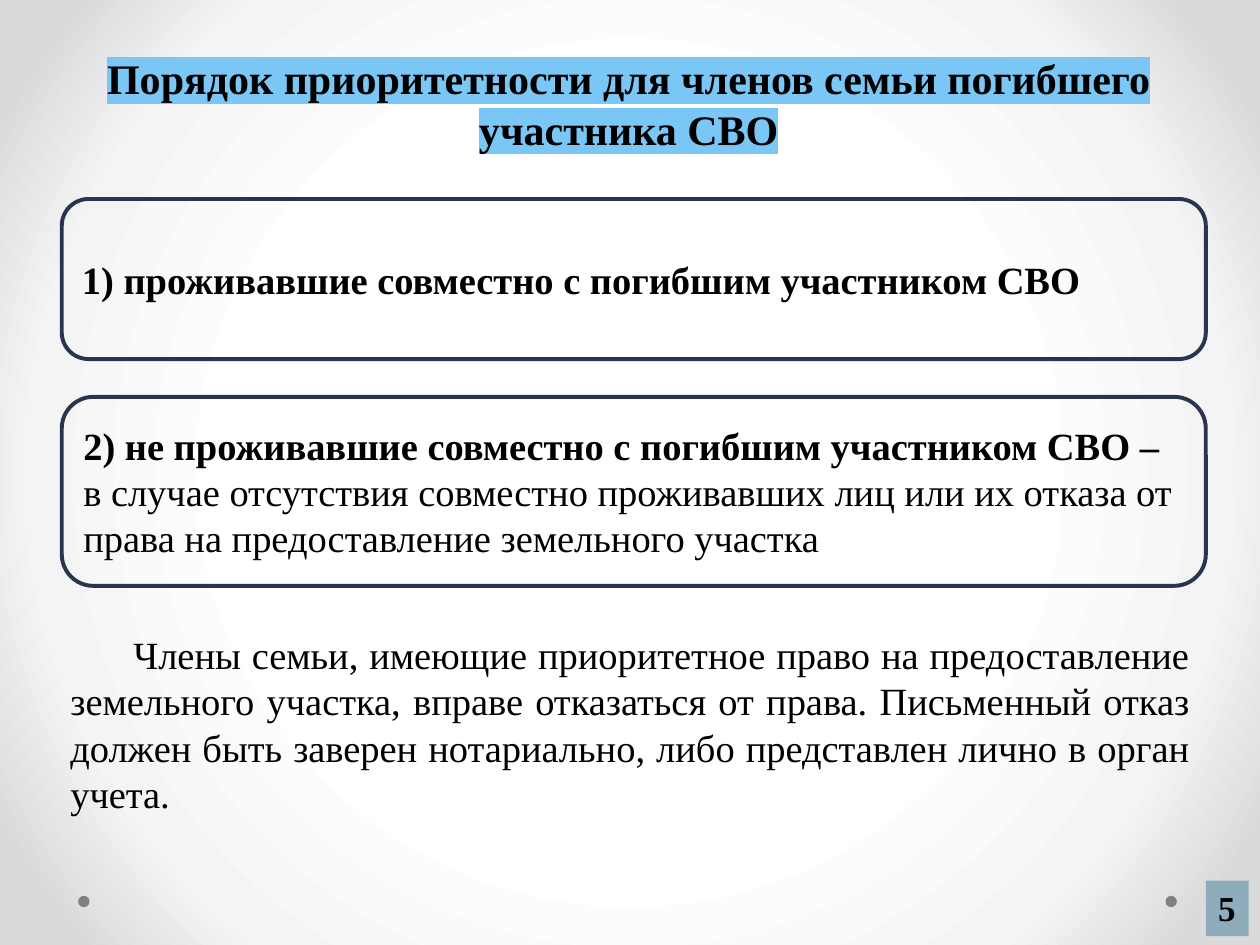
from lxml import etree
from pptx import Presentation
from pptx.dml.color import RGBColor
from pptx.enum import shapes, text
from pptx.oxml.ns import qn
from pptx.util import Inches, Pt

COLORS = {"ink": "000000", "outline": "2A344F", "dot": "808080",
          "number": "8FACBC", "highlight": "7AC7F6"}
GRADIENT = [(50, "FFFFFF"), (76, "F4F4F4"), (92, "DADADA")]
FONT = "Times New Roman"
TITLE = "Порядок приоритетности для членов семьи погибшего участника СВО"
PRIORITIES = [
    (1.58, 1.27, [("1) проживавшие совместно с погибшим участником СВО", True)]),
    (3.15, 1.5, [("2) не проживавшие совместно с погибшим участником СВО – ", True),
                 ("в случае отсутствия совместно проживавших лиц или их отказа "
                  "от права на предоставление земельного участка", False)]),
]
NOTE = ("Члены семьи, имеющие приоритетное право на предоставление земельного "
        "участка, вправе отказаться от права. Письменный отказ должен быть заверен "
        "нотариально, либо представлен лично в орган учета.")
NUMBER = "5"
DOTS = [0.62, 9.25]


def rgb(name):
    return RGBColor.from_string(COLORS[name])


def paint_background(s):
    s.background.fill.gradient()
    grad = next(s._element.iter(qn("a:gradFill")))
    for child in list(grad):
        grad.remove(child)
    stops = etree.SubElement(grad, qn("a:gsLst"))
    for pos, color in GRADIENT:
        gs = etree.SubElement(stops, qn("a:gs"), pos=str(pos * 1000))
        etree.SubElement(gs, qn("a:srgbClr"), val=color)
    circle = etree.SubElement(grad, qn("a:path"), path="circle")
    etree.SubElement(circle, qn("a:fillToRect"), dict.fromkeys("ltrb", "50000"))


def add_shape(s, kind, box, fill=None, line=None):
    sp = s.shapes.add_shape(kind, *map(Inches, box))
    sp.shadow.inherit = False
    if fill:
        sp.fill.solid()
        sp.fill.fore_color.rgb = rgb(fill)
    else:
        sp.fill.background()
    if line:
        sp.line.color.rgb = rgb(line)
        sp.line.width = Pt(2.25)
    else:
        sp.line.fill.background()
    return sp


def write(sp, runs, size, align=text.PP_ALIGN.LEFT,
          anchor=text.MSO_ANCHOR.TOP, wrap=True, highlight=None):
    tf = sp.text_frame
    tf.word_wrap = wrap
    tf.vertical_anchor = anchor
    p = tf.paragraphs[0]
    p.alignment = align
    for words, bold in runs:
        r = p.add_run()
        r.text = words
        r.font.size, r.font.bold, r.font.name = Pt(size), bold, FONT
        r.font.color.rgb = rgb("ink")
        if highlight:
            mark = etree.Element(qn("a:highlight"))
            etree.SubElement(mark, qn("a:srgbClr"), val=COLORS[highlight])
            r.font._element.find(qn("a:solidFill")).addnext(mark)
    return p


def main():
    prs = Presentation()
    prs.slide_width, prs.slide_height = Inches(10), Inches(7.5)
    s = prs.slides.add_slide(prs.slide_layouts[6])
    paint_background(s)
    kinds = shapes.MSO_SHAPE

    for left in DOTS:
        add_shape(s, kinds.OVAL, (left, 7.11, 0.09, 0.09), fill="dot")

    for top, height, runs in PRIORITIES:
        card = add_shape(s, kinds.ROUNDED_RECTANGLE, (0.49, top, 9.08, height),
                         line="outline")
        write(card, runs, 22, anchor=text.MSO_ANCHOR.MIDDLE)

    title = s.shapes.add_textbox(*map(Inches, (0.49, 0.37, 9, 0.91)))
    write(title, [(TITLE, True)], 24, text.PP_ALIGN.CENTER, highlight="highlight")

    note = s.shapes.add_textbox(*map(Inches, (0.46, 4.96, 9.08, 1.58)))
    p = write(note, [(NOTE, False)], 22, text.PP_ALIGN.JUSTIFY)
    p._p.get_or_add_pPr().set("indent", str(Inches(0.5)))

    number = add_shape(s, kinds.RECTANGLE, (9.57, 6.99, 0.34, 0.44), fill="number")
    write(number, [(NUMBER, True)], 20, wrap=False)

    prs.save("out.pptx")


if __name__ == "__main__":
    main()
